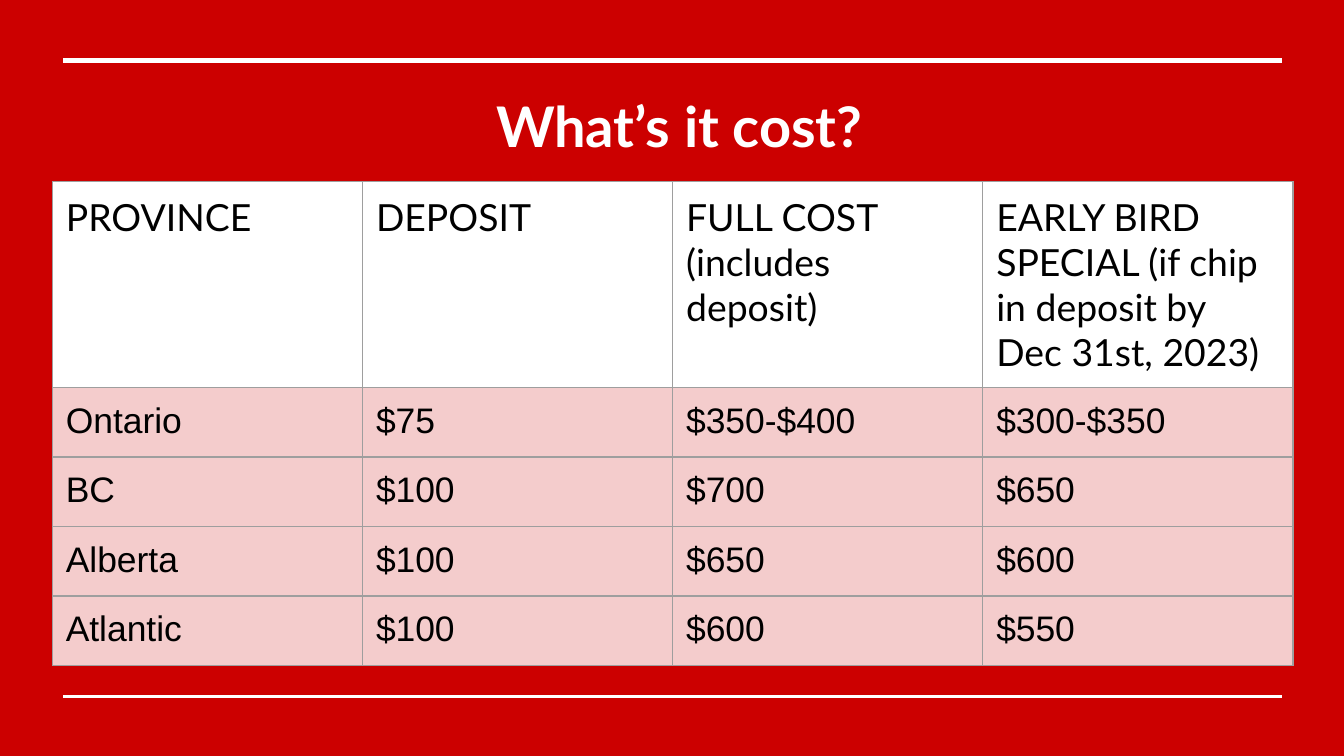
"""Build the slide that lists the cost for each province."""
from typing import NamedTuple

import pptx
import pptx.dml.color
import pptx.enum.shapes
import pptx.enum.text
import pptx.oxml.ns
import pptx.util
from lxml import etree

Inches = pptx.util.Inches
Pt = pptx.util.Pt


class Rule(NamedTuple):
    top: float
    width: float


class Style(NamedTuple):
    font: str
    size: float
    ink: str
    bold: bool = False


class Band(NamedTuple):
    height: float
    fill: str
    style: Style
    texts: tuple[str, ...]


TITLE = Style("Lato", 30, "FFFFFF", True)
HEAD = Style("Lato", 20, "000000")
BODY = Style("Arial", 19, "000000")
RULES = (Rule(0.45, 3), Rule(5.18, 1.5))
BANDS = (
    Band(0.42, "FFFFFF", HEAD, (
        "PROVINCE", "DEPOSIT", "FULL COST (includes deposit)",
        "EARLY BIRD SPECIAL (if chip in deposit by Dec 31st, 2023)",
    )),
    Band(0.11, "F4CCCC", BODY, ("Ontario", "$75", "$350-$400", "$300-$350")),
    Band(0.42, "F4CCCC", BODY, ("BC", "$100", "$700", "$650")),
    Band(0.42, "F4CCCC", BODY, ("Alberta", "$100", "$650", "$600")),
    Band(0.42, "F4CCCC", BODY, ("Atlantic", "$100", "$600", "$550")),
)


def color(target, code: str) -> None:
    target.rgb = pptx.dml.color.RGBColor.from_string(code)


def paint(fill, code: str) -> None:
    fill.solid()
    color(fill.fore_color, code)


def write(frame, text: str, style: Style) -> None:
    frame.text = text
    font = frame.paragraphs[0].font
    font.name, font.size, font.bold = style.font, Pt(style.size), style.bold
    color(font.color, style.ink)


def pad(target) -> None:
    for side in ("left", "right", "top", "bottom"):
        setattr(target, f"margin_{side}", Inches(0.1))


def draw_rule(slide, rule: Rule) -> None:
    line = slide.shapes.add_connector(
        pptx.enum.shapes.MSO_CONNECTOR.STRAIGHT,
        Inches(0.47), Inches(rule.top), Inches(9.54), Inches(rule.top))
    line.line.width = Pt(rule.width)
    color(line.line.color, "FFFFFF")
    etree.SubElement(line._element.spPr, pptx.oxml.ns.qn("a:effectLst"))


def draw_title(slide, text: str) -> None:
    box = slide.shapes.add_textbox(
        Inches(1.27), Inches(0.58), Inches(7.57), Inches(1.52))
    frame = box.text_frame
    frame.word_wrap = True
    pad(frame)
    write(frame, text, TITLE)
    frame.paragraphs[0].alignment = pptx.enum.text.PP_ALIGN.CENTER


def border(cell, code: str, width: float) -> None:
    qn = pptx.oxml.ns.qn
    props = cell._tc.get_or_add_tcPr()
    for side in "LRTB":
        line = etree.SubElement(props, qn(f"a:ln{side}"), w=str(Pt(width)))
        fill = etree.SubElement(line, qn("a:solidFill"))
        etree.SubElement(fill, qn("a:srgbClr"), val=code)


def draw_table(slide, bands: tuple[Band, ...]) -> None:
    count = len(bands[0].texts)
    side = Inches(3.28)
    shape = slide.shapes.add_table(
        len(bands), count, Inches(0.39), Inches(1.35), side, side)
    table = shape.table
    for column in table.columns:
        column.width = Inches(9.23 / count)
    for row, band in zip(table.rows, bands):
        row.height = Inches(band.height)
        for cell, text in zip(row.cells, band.texts):
            pad(cell)
            border(cell, "9E9E9E", 0.75)
            paint(cell.fill, band.fill)
            write(cell.text_frame, text, band.style)
    shape.width = shape.height = side


def main() -> None:
    deck = pptx.Presentation()
    deck.slide_width = Inches(10)
    deck.slide_height = deck.slide_width * 9 // 16
    slide = deck.slides.add_slide(deck.slide_layouts[6])
    paint(slide.background.fill, "CC0000")
    for rule in RULES:
        draw_rule(slide, rule)
    draw_title(slide, "What’s it cost?")
    draw_table(slide, BANDS)
    deck.save("out.pptx")


if __name__ == "__main__":
    main()
